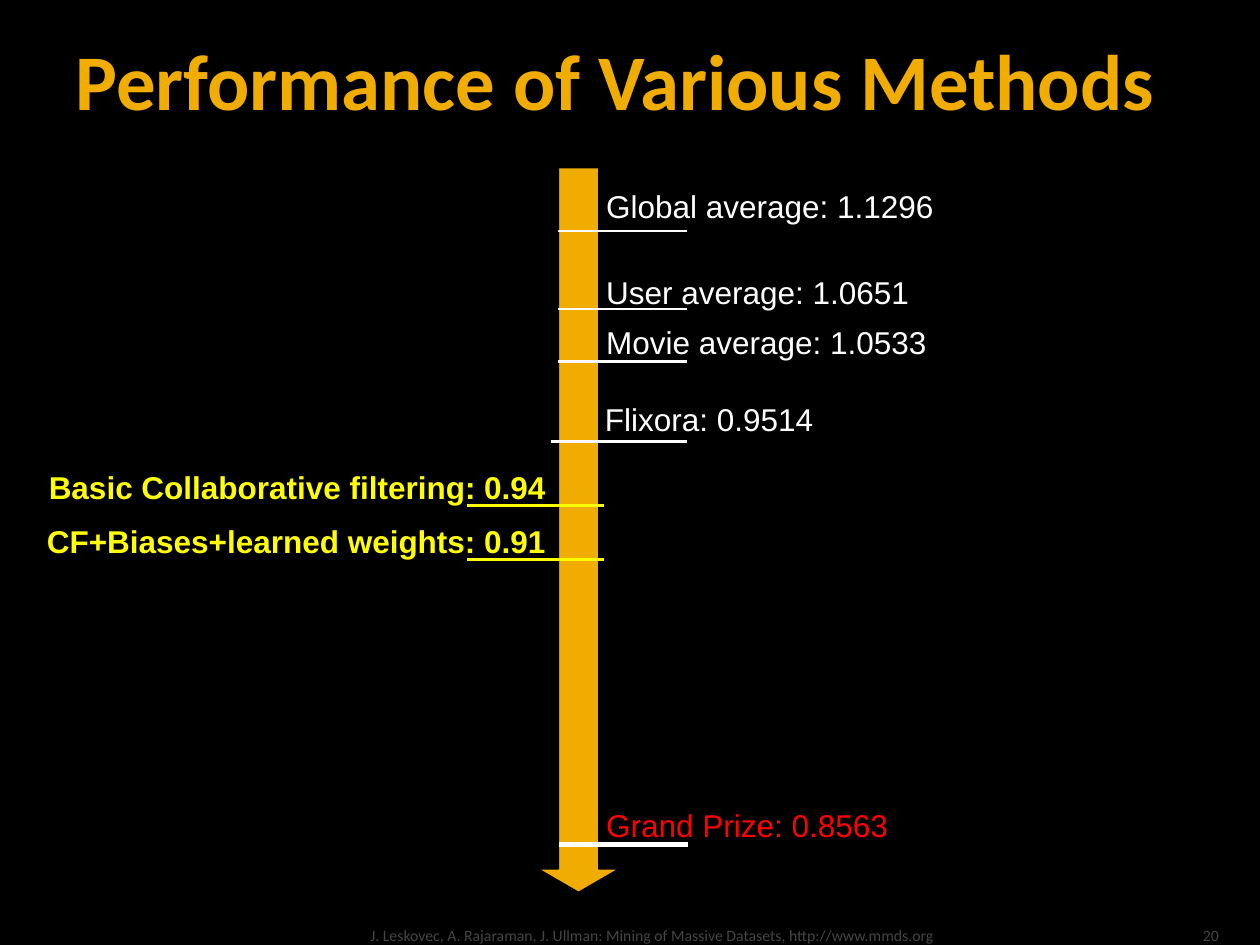
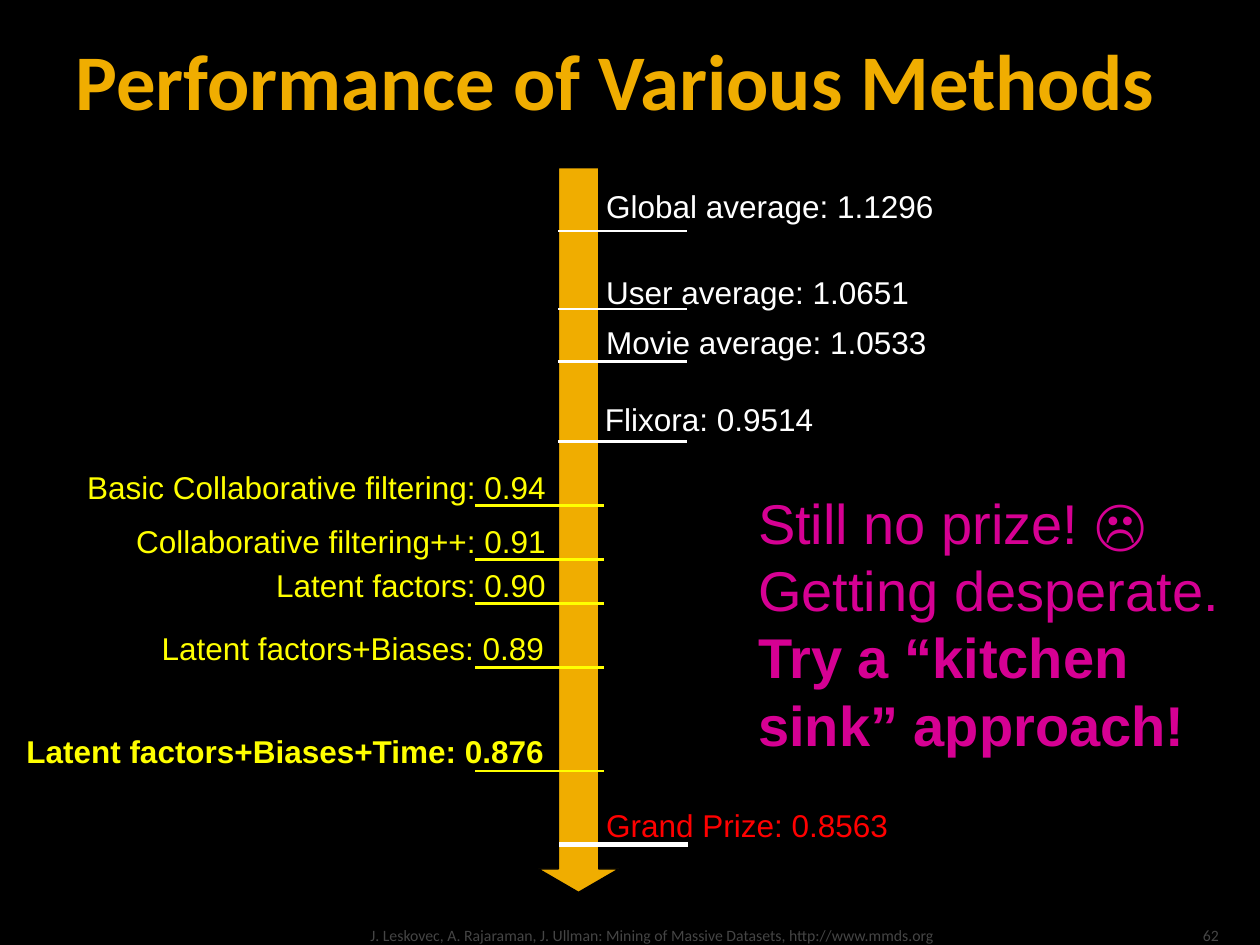
from dataclasses import dataclass, replace
from typing import NamedTuple
from lxml.etree import SubElement
from pptx import Presentation
from pptx.dml.color import RGBColor
from pptx.enum.shapes import MSO_CONNECTOR as Conn, MSO_SHAPE as Shape
from pptx.enum.text import MSO_ANCHOR as Anchor, MSO_AUTO_SIZE as Fit, PP_ALIGN as Align
from pptx.oxml.ns import qn
from pptx.util import Pt


@dataclass(frozen=True)
class Theme:
    black: str = "000000"
    white: str = "FFFFFF"
    gold: str = "F0AD00"
    yellow: str = "FFFF00"
    red: str = "FF0000"
    magenta: str = "D60093"
    gray: str = "454545"
    head_font: str = "Calibri"
    body_font: str = "Arial"
    title_size: float = 45
    label_size: float = 18
    callout_size: float = 32
    footer_size: float = 9
    tick_weight: float = 1.5
    goal_weight: float = 3


class Box(NamedTuple):
    x: float
    y: float
    w: float
    h: float


@dataclass(frozen=True)
class MarkStyle:
    color: str
    tick_color: str
    weight: float
    align: Align
    label_edge: float
    tick_start: float
    tick_end: float


class Mark(NamedTuple):
    text: str
    label_y: float
    tick_y: float
    label_w: float
    style: MarkStyle
    bold: bool = False


T = Theme()
PAGE = Box(0, 0, 720, 540)
TITLE = Box(36, 12.2, 648, 66.2)
SCALE = Box(307.6, 95.9, 46, 414)
CALLOUT = Box(426.2, 275.6, 280, 162.7)
FOOTER = Box(208.1, 518.4, 433.4, 21.6)
NUMBER = Box(646, 518.4, 57.6, 21.6)
LABEL_H = 28.8
BASELINE_W = 212.4

BASELINE = MarkStyle(T.white, T.white, T.tick_weight, Align.LEFT, 31.7, 11.4, 84.9)
SERVICE = replace(BASELINE, label_edge=31)
SERVICE_LONG = replace(SERVICE, tick_start=7)
GOAL = replace(BASELINE, color=T.red, weight=T.goal_weight, tick_start=12, tick_end=85.5)
METHOD = MarkStyle(T.yellow, T.yellow, T.tick_weight, Align.RIGHT, 11.4, -36, 37.7)
METHOD_LONG = replace(METHOD, tick_start=-40.5)
METHOD_INSET = replace(METHOD, label_edge=10.4)

HEADING = "Performance of Various Methods"
CREDIT = "J. Leskovec, A. Rajaraman, J. Ullman: Mining of Massive Datasets, http://www.mmds.org"
CALLOUT_LINES = ["Still no prize! ☹", "Getting desperate.", "Try a “kitchen \vsink” approach!"]

SHARED_MARKS = [
    Mark("Global average: 1.1296", 7.5, 36.1, BASELINE_W, BASELINE),
    Mark("User average: 1.0651", 56.7, 80.7, BASELINE_W, BASELINE),
    Mark("Movie average: 1.0533", 85.2, 110.8, BASELINE_W, BASELINE),
    Mark("Grand Prize: 0.8563", 361.4, 386.6, 178.6, GOAL),
]
FIRST_METHODS = [
    Mark("Flixora: 0.9514", 129.1, 156.3, BASELINE_W, SERVICE_LONG),
    Mark("Basic Collaborative filtering: 0.94", 168.1, 193, 313.2, METHOD_LONG, True),
    Mark("CF+Biases+learned weights: 0.91", 199, 223.9, 313.2, METHOD_LONG, True),
]
ALL_METHODS = [
    Mark("Flixora: 0.9514", 129.1, 156.3, BASELINE_W, SERVICE),
    Mark("Basic Collaborative filtering: 0.94", 168.1, 193, 277.2, METHOD),
    Mark("Collaborative filtering++: 0.91", 199, 223.9, 277.2, METHOD),
    Mark("Latent factors: 0.90", 223.9, 248.9, 239.8, METHOD),
    Mark("Latent factors+Biases: 0.89", 259.9, 285.6, 257.8, METHOD_INSET),
    Mark("Latent factors+Biases+Time: 0.876", 319, 344.8, 317.8, METHOD_INSET, True),
]


def rgb(color):
    return RGBColor.from_string(color)


def set_all(obj, values):
    for name, value in values.items():
        setattr(obj, name, value)


def margins(left, top, right, bottom):
    return {"margin_left": Pt(left), "margin_top": Pt(top),
            "margin_right": Pt(right), "margin_bottom": Pt(bottom)}


def write(sp, lines, font, color, bold=(False,), align=Align.LEFT, frame=None):
    tf = sp.text_frame
    set_all(tf, {"word_wrap": True, **(frame or {})})
    tf.text = "\n".join(lines)
    for p, is_bold in zip(tf.paragraphs, bold):
        p.alignment = align
        for r in p.runs:
            set_all(r.font, {**font, "bold": is_bold})
            r.font.color.rgb = rgb(color)


def add_text(slide, box, *args, **kwargs):
    sp = slide.shapes.add_textbox(*map(Pt, box))
    write(sp, *args, **kwargs)


def add_solid(slide, kind, box, fill, line_width):
    sp = slide.shapes.add_shape(kind, *map(Pt, box))
    sp.shadow.inherit = False
    sp.fill.solid()
    sp.fill.fore_color.rgb = rgb(fill)
    sp.line.color.rgb = rgb(T.black)
    sp.line.width = Pt(line_width)
    return sp


def draw_backdrop(slide, box):
    sp = add_solid(slide, Shape.RECTANGLE, box, T.black, 3)
    tree = sp._element.getparent()
    tree.insert(tree.index(slide.shapes.title._element), sp._element)


def draw_title(slide, box):
    sp = slide.shapes.title
    set_all(sp, dict(zip(("left", "top", "width", "height"), map(Pt, box))))
    frame = {"vertical_anchor": Anchor.MIDDLE, "auto_size": Fit.NONE,
             **margins(7.2, 3.6, 3.6, 3.6)}
    font = {"name": T.head_font, "size": Pt(T.title_size)}
    write(sp, [HEADING], font, T.gold, bold=(True,), frame=frame)


def draw_tick(slide, box, mark):
    style, y = mark.style, Pt(box.y + mark.tick_y)
    start, end = Pt(box.x + style.tick_start), Pt(box.x + style.tick_end)
    tick = slide.shapes.add_connector(Conn.STRAIGHT, start, y, end, y)
    tick.line.color.rgb = rgb(style.tick_color)
    tick.line.width = Pt(style.weight)
    SubElement(tick._element.spPr, qn("a:effectLst"))


def draw_label(slide, box, mark):
    style = mark.style
    x = box.x + style.label_edge
    if style.align == Align.RIGHT:
        x -= mark.label_w
    label = Box(x, box.y + mark.label_y, mark.label_w, LABEL_H)
    font = {"name": T.body_font, "size": Pt(T.label_size)}
    add_text(slide, label, [mark.text], font, style.color, bold=(mark.bold,),
             align=style.align, frame={"auto_size": Fit.SHAPE_TO_FIT_TEXT})


def draw_scale(slide, box, marks):
    arrow = add_solid(slide, Shape.DOWN_ARROW, box, T.gold, 0.75)
    arrow.adjustments[0], arrow.adjustments[1] = 0.5, 0.29
    for mark in marks:
        draw_tick(slide, box, mark)
        draw_label(slide, box, mark)


def draw_callout(slide, box, lines):
    font = {"name": T.body_font, "size": Pt(T.callout_size)}
    add_text(slide, box, lines, font, T.magenta, bold=(False, False, True),
             frame={"word_wrap": False, "auto_size": Fit.SHAPE_TO_FIT_TEXT})


def draw_footer_part(slide, box, text, side_margin, align):
    frame = {"vertical_anchor": Anchor.BOTTOM, **margins(side_margin, 3.6, side_margin, 0)}
    font = {"name": T.head_font, "size": Pt(T.footer_size)}
    add_text(slide, box, [text], font, T.gray, align=align, frame=frame)


def add_scale_slide(prs, number, marks, callout=None):
    slide = prs.slides.add_slide(prs.slide_layouts[5])
    draw_backdrop(slide, PAGE)
    draw_title(slide, TITLE)
    draw_scale(slide, SCALE, marks)
    if callout:
        draw_callout(slide, CALLOUT, callout)
    draw_footer_part(slide, FOOTER, CREDIT, 3.6, Align.LEFT)
    draw_footer_part(slide, NUMBER, str(number), 7.2, Align.RIGHT)


def main():
    prs = Presentation()
    set_all(prs, {"slide_width": Pt(PAGE.w), "slide_height": Pt(PAGE.h)})
    add_scale_slide(prs, 20, SHARED_MARKS + FIRST_METHODS)
    add_scale_slide(prs, 62, SHARED_MARKS + ALL_METHODS, CALLOUT_LINES)
    prs.save("out.pptx")


if __name__ == "__main__":
    main()
